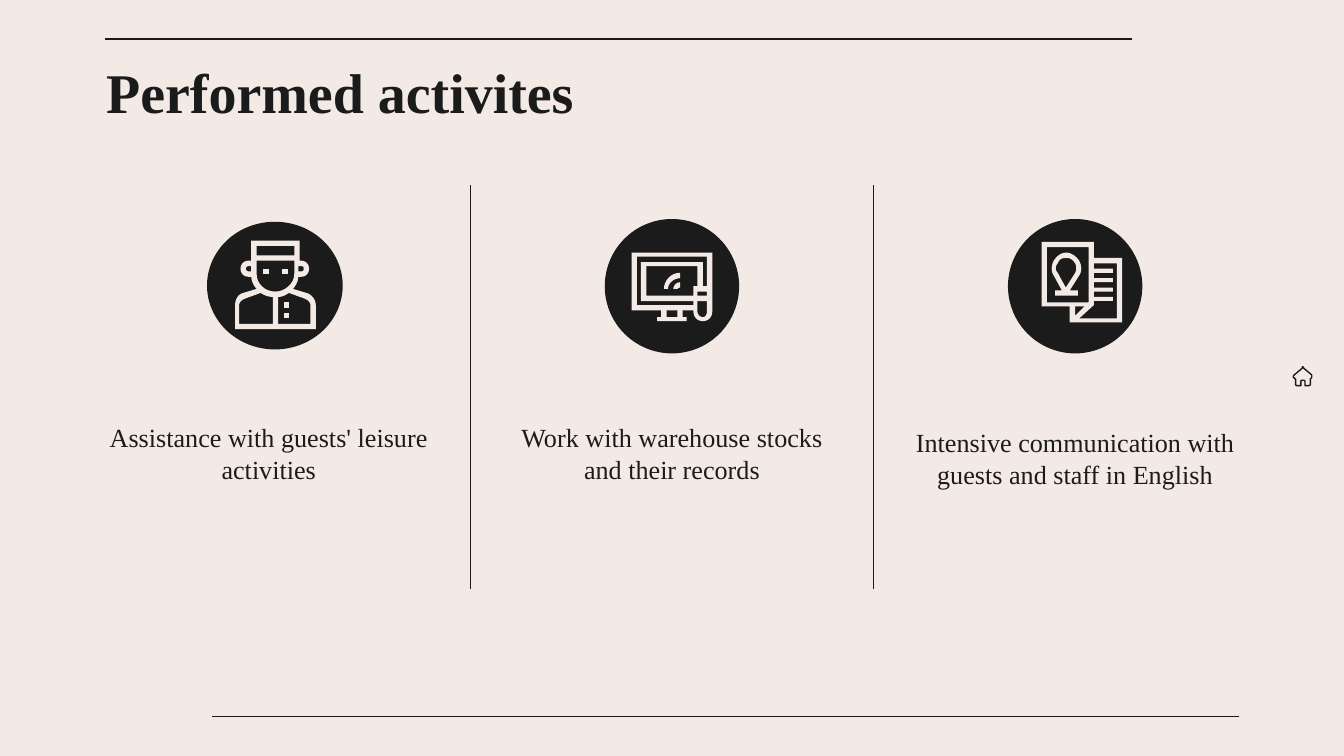
from dataclasses import dataclass

from lxml import etree
from pptx import Presentation
from pptx.dml.color import RGBColor
from pptx.enum.shapes import MSO_CONNECTOR, MSO_SHAPE
from pptx.enum.text import MSO_ANCHOR, PP_ALIGN
from pptx.oxml.ns import qn
from pptx.shapes.autoshape import Shape
from pptx.slide import Slide
from pptx.text.text import TextFrame
from pptx.util import Inches, Pt

INK = RGBColor(0x1B, 0x1B, 0x1B)
PAPER = RGBColor(0xF4, 0xEA, 0xE5)
FONT = "Times New Roman"
CURVE_STEPS = 8

Contour = list[tuple[float, ...]]
Outline = list[Contour]


@dataclass
class Activity:
    caption: str
    caption_top: float
    disc: tuple[float, float, float, float]
    icon: list[Outline]


@dataclass
class Rule:
    x1: float
    y1: float
    x2: float
    y2: float


def box(left: float, top: float, right: float, bottom: float) -> Contour:
    return [(left, top), (right, top), (right, bottom), (left, bottom)]


def flatten(contour: Contour) -> list[tuple[int, int]]:
    points = [contour[0]]
    for step in contour[1:]:
        if len(step) == 2:
            points.append(step)
            continue
        x0, y0 = points[-1]
        x1, y1, x2, y2, x3, y3 = step
        for i in range(1, CURVE_STEPS + 1):
            t = i / CURVE_STEPS
            a, b, c, d = (1 - t) ** 3, 3 * t * (1 - t) ** 2, 3 * t * t * (1 - t), t ** 3
            points.append((a * x0 + b * x1 + c * x2 + d * x3, a * y0 + b * y1 + c * y2 + d * y3))
    return [(Inches(x / 100), Inches(y / 100)) for x, y in points]


def draw_outline(s: Slide, outline: Outline) -> Shape:
    first, *others = [flatten(contour) for contour in outline]
    builder = s.shapes.build_freeform(*first[0])
    builder.add_line_segments(first[1:], close=True)
    for points in others:
        builder.move_to(*points[0])
        builder.add_line_segments(points[1:], close=True)
    sp = builder.convert_to_shape()
    sp.shadow.inherit = False
    return sp


def fill_solid(sp: Shape, color: RGBColor) -> None:
    sp.fill.solid()
    sp.fill.fore_color.rgb = color
    sp.line.fill.background()


def write(tf: TextFrame, text: str, size: float, align: PP_ALIGN, anchor: MSO_ANCHOR, bold: bool = False) -> None:
    tf.word_wrap = True
    tf.margin_left = tf.margin_right = tf.margin_top = tf.margin_bottom = 0
    tf.vertical_anchor = anchor
    tf.text = text
    p = tf.paragraphs[0]
    p.alignment = align
    font = p.runs[0].font
    font.name, font.size, font.bold = FONT, Pt(size), bold
    font.color.rgb = INK


def draw_rule(s: Slide, rule: Rule) -> None:
    line = s.shapes.add_connector(
        MSO_CONNECTOR.STRAIGHT, Inches(rule.x1), Inches(rule.y1), Inches(rule.x2), Inches(rule.y2))
    line.line.color.rgb = INK
    line.line.width = Pt(0.75)
    etree.SubElement(line._element.spPr, qn("a:effectLst"))


def draw_activity(s: Slide, activity: Activity, left: float) -> None:
    disc = s.shapes.add_shape(MSO_SHAPE.OVAL, *map(Inches, activity.disc))
    disc.shadow.inherit = False
    fill_solid(disc, INK)
    parts = [draw_outline(s, outline) for outline in activity.icon]
    for part in parts:
        fill_solid(part, PAPER)
    s.shapes.add_group_shape(parts)
    caption = s.shapes.add_textbox(Inches(left), Inches(activity.caption_top), Inches(2.42), Inches(1))
    write(caption.text_frame, activity.caption, 14, PP_ALIGN.CENTER, MSO_ANCHOR.MIDDLE)


BELLBOY = [
    [
        [(187, 179), (187, 194), (185, 194), (181, 194, 179, 197, 179, 200), (179, 203, 181, 206, 185, 206),
         (187, 206), (187, 209, 189, 213, 191, 215), (181, 218), (177, 219, 175, 223, 175, 227), (175, 245),
         (235, 245), (235, 227), (235, 223, 232, 219, 228, 218), (218, 215), (220, 213, 222, 209, 222, 206),
         (224, 206), (228, 206, 230, 203, 230, 200), (230, 197, 228, 194, 224, 194), (223, 194), (223, 179)],
        box(191, 183, 219, 190),
        [(187, 198), (187, 202), (185, 202), (184, 202, 183, 201, 183, 200), (183, 199, 184, 198, 185, 198)],
        [(224, 198), (226, 198, 226, 199, 226, 200), (226, 201, 226, 202, 224, 202), (222, 202), (222, 198)],
        [(219, 194), (219, 204), (219, 211, 212, 217, 205, 217), (197, 217, 191, 211, 191, 204), (191, 194)],
        [(194, 218), (197, 220, 200, 221, 203, 221), (203, 241), (178, 241), (178, 227),
         (178, 225, 180, 223, 183, 222)],
        [(215, 218), (226, 222), (229, 223, 231, 225, 231, 227), (231, 241), (207, 241), (207, 221),
         (210, 221, 212, 220, 215, 218)],
    ],
    *[[box(x, y, x + 4, y + 4)] for x, y in [(196, 200), (210, 200), (211, 225), (211, 233)]],
]
COMPUTER = [
    [
        [(470, 188), (470, 231), (492, 231), (492, 236), (489, 236), (489, 239), (511, 239), (511, 236),
         (508, 236), (508, 231), (516, 231), (516, 232), (516, 236, 519, 239, 523, 239),
         (527, 239, 530, 236, 530, 232), (530, 188)],
        [(481, 198), (519, 198), (519, 213), (516, 213), (516, 220), (481, 220)],
        box(519, 217, 526, 220),
        [(526, 191), (526, 213), (523, 213), (523, 195), (477, 195), (477, 224), (516, 224), (516, 227),
         (474, 227), (474, 191)],
        box(496, 231, 504, 236),
        [(526, 224), (526, 232), (526, 234, 525, 236, 523, 236), (521, 236, 519, 234, 519, 232), (519, 224)],
    ],
    [[(506, 203), (499, 203, 494, 209, 494, 215), (497, 215), (497, 211, 501, 207, 506, 207)]],
    [[(506, 210), (503, 210, 501, 213, 501, 215), (504, 215), (504, 215, 505, 214, 506, 214)]],
]
TEXT_LINES = [point for y in (224, 217, 210, 203)
              for point in [(814, y), (828, y), (828, y - 3), (814, y - 3)]]
LEAFLETS = [
    [
        [(775, 180), (775, 228), (796, 228), (796, 240), (835, 240), (835, 192), (814, 192), (814, 180)],
        box(779, 184, 810, 225),
        [(807, 228), (800, 235), (800, 228)],
        [(831, 196), (831, 237), (803, 237), (814, 227), *TEXT_LINES, (814, 196)],
    ],
    [
        [(793, 188), (789, 188, 786, 191, 784, 194), (782, 198, 782, 202, 784, 205), (790, 216), (785, 216),
         (785, 220), (802, 220), (802, 216), (796, 216), (803, 205), (805, 202, 805, 198, 803, 194),
         (801, 191, 797, 188, 794, 188)],
        [(794, 192), (796, 192, 798, 193, 800, 196), (801, 198, 801, 201, 800, 203), (793, 214), (787, 203),
         (785, 201, 785, 198, 787, 196), (788, 193, 790, 192, 793, 192)],
    ],
]
HOME = [[(969, 273), (969, 273, 969, 274, 969, 274), (963, 279), (962, 280, 962, 281, 963, 281),
         (963, 281, 963, 282, 964, 282), (964, 286), (964, 287, 965, 287, 965, 287), (968, 287), (968, 284),
         (968, 283, 968, 283, 969, 283), (970, 283), (970, 283, 971, 283, 971, 284), (971, 287), (973, 287),
         (974, 287, 975, 287, 975, 286), (975, 282), (975, 282, 976, 281, 976, 281),
         (976, 281, 976, 280, 976, 279), (970, 274), (970, 274, 970, 273, 969, 273)]]

ACTIVITIES = [
    Activity("Assistance with guests' leisure activities", 2.87, (1.54, 1.65, 1.01, 0.95), BELLBOY),
    Activity("Work with warehouse stocks and their records", 2.87, (4.5, 1.63, 1, 1), COMPUTER),
    Activity("Intensive communication with guests and staff in English", 2.91, (7.5, 1.63, 1, 1), LEAFLETS),
]
RULES = [
    Rule(8.42, 0.29, 0.78, 0.29),
    Rule(1.58, 5.33, 9.22, 5.33),
    *[Rule(x, 1.38, x, 4.38) for x in (3.5, 6.5)],
]


def main() -> None:
    prs = Presentation()
    prs.slide_width = Inches(10)
    prs.slide_height = prs.slide_width * 9 // 16
    s = prs.slides.add_slide(prs.slide_layouts[5])
    s.background.fill.solid()
    s.background.fill.fore_color.rgb = PAPER

    title = s.shapes.title
    title.left, title.top, title.width, title.height = map(Inches, (0.79, 0.43, 8.43, 0.5))
    write(title.text_frame, "Performed activites", 30, PP_ALIGN.LEFT, MSO_ANCHOR.BOTTOM, bold=True)

    for rule in RULES:
        draw_rule(s, rule)
    for column, activity in enumerate(ACTIVITIES):
        draw_activity(s, activity, 0.79 + 3 * column)

    home = draw_outline(s, HOME)
    home.fill.background()
    home.line.color.rgb = INK
    home.line.width = Pt(0.75)

    prs.save("out.pptx")


if __name__ == "__main__":
    main()
